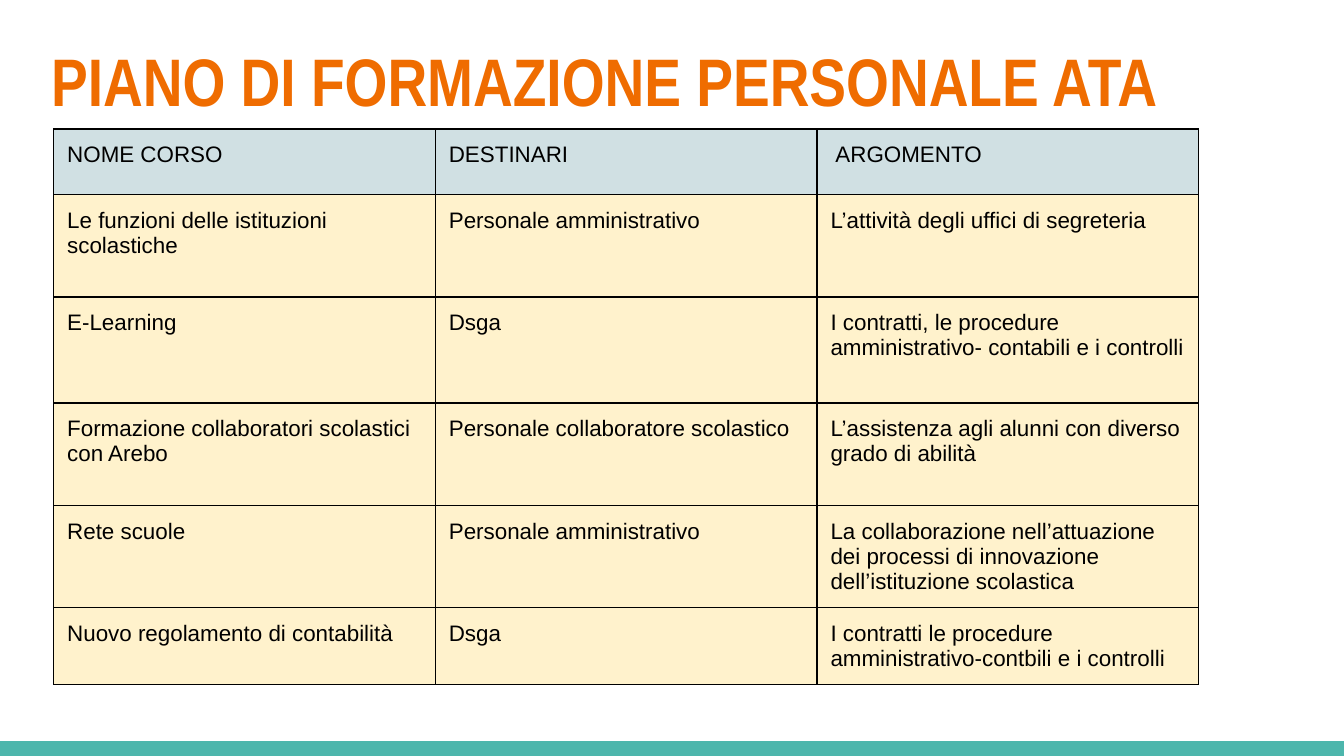
from typing import NamedTuple

from lxml.etree import SubElement
from pptx import Presentation
from pptx.dml.color import RGBColor
from pptx.enum.shapes import MSO_SHAPE
from pptx.enum.text import MSO_ANCHOR, MSO_AUTO_SIZE, PP_ALIGN
from pptx.oxml.ns import qn
from pptx.util import Inches, Pt

COLORS = {
    "title": "EF6C00",
    "bar": "4DB6AC",
    "header": "D0E0E3",
    "body": "FFF2CC",
    "ink": "000000",
}
INSET = Inches(0.1)
SLIDE_WIDTH = 10
SLIDE_HEIGHT = SLIDE_WIDTH * 9 / 16
BAR_HEIGHT = 0.11
COLUMN_WIDTH = 2.84


class Course(NamedTuple):
    name: str
    audience: str
    topic: str
    height: float
    fill: str = "body"


ROWS = [
    Course("NOME CORSO", "DESTINARI", " ARGOMENTO", 0.49, "header"),
    Course("Le funzioni delle istituzioni scolastiche", "Personale amministrativo",
           "L’attività degli uffici di segreteria", 0.76),
    Course("E-Learning", "Dsga",
           "I contratti, le procedure amministrativo- contabili e i controlli", 0.79),
    Course("Formazione collaboratori scolastici con Arebo",
           "Personale collaboratore scolastico",
           "L’assistenza agli alunni con diverso grado di abilità", 0.76),
    Course("Rete scuole", "Personale amministrativo",
           "La collaborazione nell’attuazione dei processi di innovazione "
           "dell’istituzione scolastica", 0.48),
    Course("Nuovo regolamento di contabilità", "Dsga",
           "I contratti le procedure amministrativo-contbili e i controlli", 0.48),
]


def color(name: str) -> RGBColor:
    return RGBColor.from_string(COLORS[name])


def add_run(paragraph, text: str, font: str, size: int, ink: str, bold: bool = False) -> None:
    run = paragraph.add_run()
    run.text = text
    run.font.name = font
    run.font.size = Pt(size)
    run.font.bold = bold
    run.font.color.rgb = color(ink)


def set_insets(box) -> None:
    box.margin_left = box.margin_right = box.margin_top = box.margin_bottom = INSET


def add_borders(cell) -> None:
    properties = cell._tc.get_or_add_tcPr()
    for index, side in enumerate(("a:lnL", "a:lnR", "a:lnT", "a:lnB")):
        line = SubElement(properties, qn(side), w=str(Pt(0.75)))
        fill = SubElement(line, qn("a:solidFill"))
        SubElement(fill, qn("a:srgbClr"), val=COLORS["ink"])
        # Borders come before the cell fill in the schema
        properties.insert(index, line)


def fill_cell(cell, text: str, fill: str) -> None:
    cell.fill.solid()
    cell.fill.fore_color.rgb = color(fill)
    set_insets(cell)
    add_run(cell.text_frame.paragraphs[0], text, "Arial", 12, "ink")
    add_borders(cell)


def add_bar(slide) -> None:
    bar = slide.shapes.add_shape(
        MSO_SHAPE.RECTANGLE, 0, Inches(SLIDE_HEIGHT - BAR_HEIGHT),
        Inches(SLIDE_WIDTH), Inches(BAR_HEIGHT))
    bar.shadow.inherit = False
    bar.fill.solid()
    bar.fill.fore_color.rgb = color("bar")
    bar.line.fill.background()


def set_title(slide, text: str) -> None:
    title = slide.shapes.title
    title.left, title.top = Inches(0.28), Inches(0.19)
    title.width, title.height = Inches(9.32), Inches(0.77)
    frame = title.text_frame
    frame.word_wrap = True
    frame.auto_size = MSO_AUTO_SIZE.NONE
    frame.vertical_anchor = MSO_ANCHOR.TOP
    set_insets(frame)
    paragraph = frame.paragraphs[0]
    paragraph.alignment = PP_ALIGN.LEFT
    paragraph.space_before = Pt(0)
    add_run(paragraph, text, "Arial Narrow", 36, "title", bold=True)


def add_course_table(slide, rows: list[Course]) -> None:
    height = sum(row.height for row in rows)
    table = slide.shapes.add_table(
        len(rows), 3, Inches(0.4), Inches(0.96),
        Inches(3 * COLUMN_WIDTH), Inches(height)).table
    table.horz_banding = False
    for column in table.columns:
        column.width = Inches(COLUMN_WIDTH)
    for index, row in enumerate(rows):
        table.rows[index].height = Inches(row.height)
        for position, text in enumerate((row.name, row.audience, row.topic)):
            fill_cell(table.cell(index, position), text, row.fill)


def main() -> None:
    presentation = Presentation()
    presentation.slide_width = Inches(SLIDE_WIDTH)
    presentation.slide_height = Inches(SLIDE_HEIGHT)
    title_only = presentation.slide_layouts[5]
    slide = presentation.slides.add_slide(title_only)

    # Bottom bar, title and table
    add_bar(slide)
    set_title(slide, "PIANO DI FORMAZIONE PERSONALE ATA")
    add_course_table(slide, ROWS)

    presentation.save("out.pptx")


if __name__ == "__main__":
    main()
